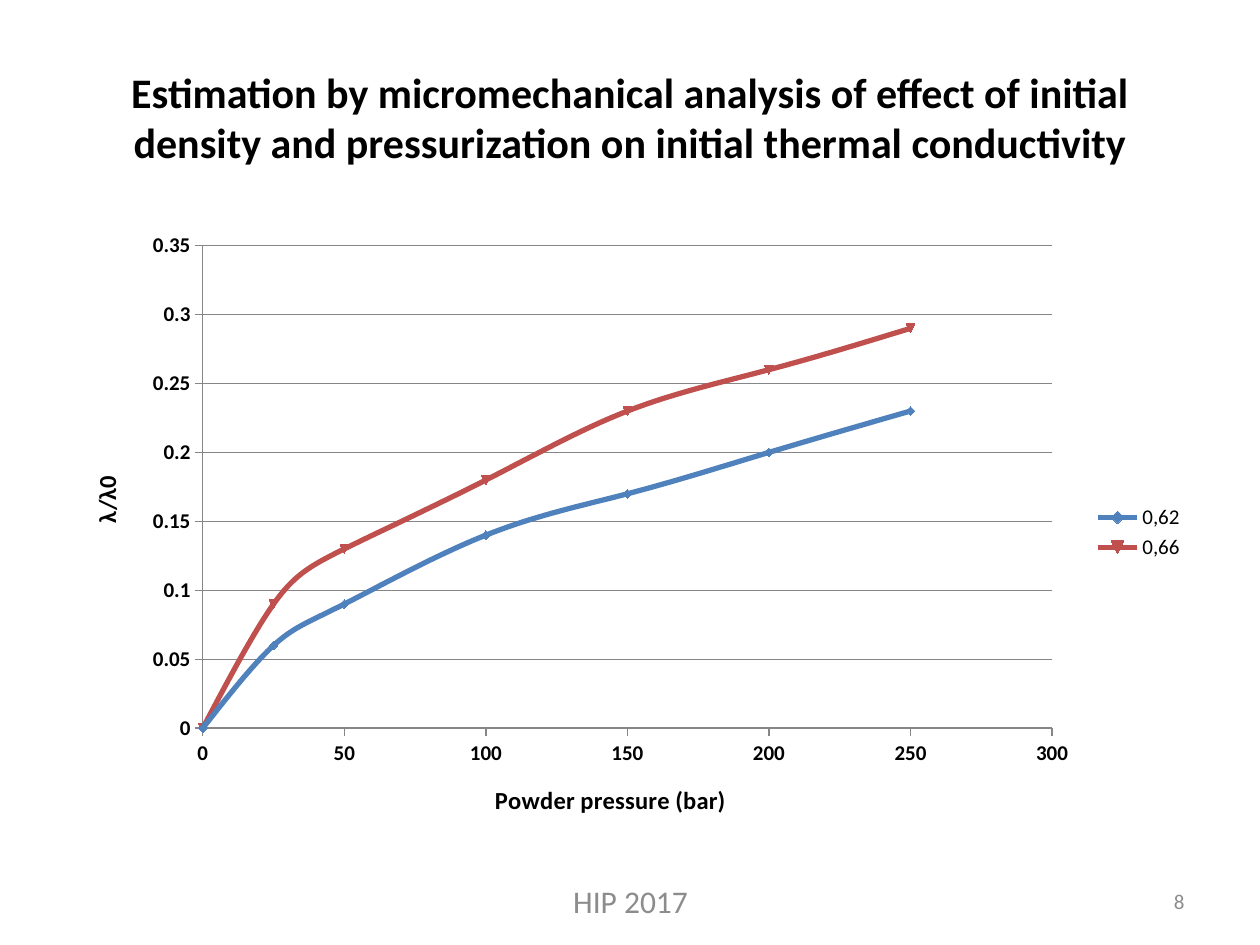
from lxml import etree
from pptx import Presentation
from pptx.chart.data import XyChartData
from pptx.dml.color import RGBColor
from pptx.enum.chart import XL_CHART_TYPE, XL_LEGEND_POSITION, XL_TICK_MARK
from pptx.enum.text import MSO_ANCHOR, PP_ALIGN
from pptx.oxml.ns import qn
from pptx.util import Inches, Pt

FONT = "Calibri"
COLORS = {"text": "000000", "footer": "8C8C8C", "axis": "868686"}
PRESSURES = [0, 25, 50, 100, 150, 200, 250]
DENSITIES = {
    "0,62": ("4F81BD", [0, 0.06, 0.09, 0.14, 0.17, 0.2, 0.23]),
    "0,66": ("C0504D", [0, 0.09, 0.13, 0.18, 0.23, 0.26, 0.29]),
}
CHART_WIDTH, CHART_HEIGHT = 9, 4.95
PLOT_AREA = {
    "x": 1.11 / CHART_WIDTH,
    "y": 0.2 / CHART_HEIGHT,
    "w": 6.74 / CHART_WIDTH,
    "h": 3.83 / CHART_HEIGHT,
}


def rgb(value):
    return RGBColor.from_string(value)


def style_font(font, size, color, bold=False):
    font.name = FONT
    font.size = Pt(size)
    font.bold = bold
    font.color.rgb = rgb(color)


def set_text(frame, text, size, color, align, bold=False):
    frame.text = text
    frame.word_wrap = True
    frame.vertical_anchor = MSO_ANCHOR.MIDDLE
    paragraph = frame.paragraphs[0]
    paragraph.alignment = align
    style_font(paragraph.runs[0].font, size, color, bold)


def add_title(slide, text):
    title = slide.shapes.title
    title.left, title.top = Inches(0.5), Inches(0.3)
    title.width, title.height = Inches(9), Inches(1.25)
    set_text(title.text_frame, text, 24, COLORS["text"], PP_ALIGN.CENTER, True)


def add_footer(slide, text, left, width, size, align):
    footer = slide.shapes.add_textbox(
        Inches(left), Inches(6.95), Inches(width), Inches(0.4))
    set_text(footer.text_frame, text, size, COLORS["footer"], align)


def style_axis(axis, title, maximum, step, gridlines):
    axis.minimum_scale = 0
    axis.maximum_scale = maximum
    axis.major_unit = step
    axis.major_tick_mark = XL_TICK_MARK.OUTSIDE
    axis.has_major_gridlines = gridlines
    axis.format.line.color.rgb = rgb(COLORS["axis"])
    if gridlines:
        axis.major_gridlines.format.line.color.rgb = rgb(COLORS["axis"])
    style_font(axis.tick_labels.font, 12, COLORS["text"], True)
    axis.tick_labels.number_format = "General"
    axis.tick_labels.number_format_is_linked = False
    axis.axis_title.text_frame.text = title
    title_run = axis.axis_title.text_frame.paragraphs[0].runs[0]
    style_font(title_run.font, 14, COLORS["text"], True)


def style_curve(curve, number, color):
    curve.format.line.color.rgb = rgb(color)
    curve.format.line.width = Pt(3)
    curve.marker.size = 5
    curve.marker.format.fill.solid()
    curve.marker.format.fill.fore_color.rgb = rgb(color)
    curve.marker.format.line.color.rgb = rgb(color)
    curve._element.find(qn("c:idx")).set("val", str(number))
    curve._element.find(qn("c:smooth")).set("val", "1")


def place_plot_area(chart):
    plot_area = chart._chartSpace.chart.plotArea
    layout = plot_area.find(qn("c:layout"))
    if layout is None:
        layout = etree.Element(qn("c:layout"))
        plot_area.insert(0, layout)
    manual = etree.SubElement(layout, qn("c:manualLayout"))
    settings = {"layoutTarget": "inner", "xMode": "edge", "yMode": "edge", **PLOT_AREA}
    for name, value in settings.items():
        etree.SubElement(manual, qn(f"c:{name}")).set("val", str(value))


def add_conductivity_chart(slide):
    data = XyChartData()
    for density, (_, ratios) in DENSITIES.items():
        curve = data.add_series(density)
        for pressure, ratio in zip(PRESSURES, ratios):
            curve.add_data_point(pressure, ratio)
    chart = slide.shapes.add_chart(
        XL_CHART_TYPE.XY_SCATTER_SMOOTH, Inches(0.5), Inches(1.75),
        Inches(CHART_WIDTH), Inches(CHART_HEIGHT), data).chart
    style_font(chart.font, 10, COLORS["text"])
    chart.has_title = False
    chart.plots[0].vary_by_categories = False
    chart.has_legend = True
    chart.legend.position = XL_LEGEND_POSITION.RIGHT
    chart.legend.include_in_layout = False
    style_font(chart.legend.font, 12, COLORS["text"])
    style_axis(chart.category_axis, "Powder pressure (bar)", 300, 50, False)
    style_axis(chart.value_axis, "λ/λ0", 0.35, 0.05, True)
    curves = zip(chart.plots[0].series, DENSITIES.values())
    for number, (curve, (color, _)) in enumerate(curves, start=1):
        style_curve(curve, number, color)
    place_plot_area(chart)


def main():
    deck = Presentation()
    deck.slide_width, deck.slide_height = Inches(10), Inches(7.5)
    slide = deck.slides.add_slide(deck.slide_layouts[5])
    add_title(slide, "Estimation by micromechanical analysis of effect of initial "
                     "density and pressurization on initial thermal conductivity")
    add_conductivity_chart(slide)
    add_footer(slide, "8", 7.17, 2.33, 12, PP_ALIGN.RIGHT)
    add_footer(slide, "HIP 2017", 3.42, 3.17, 18, PP_ALIGN.CENTER)
    deck.save("out.pptx")


main()
